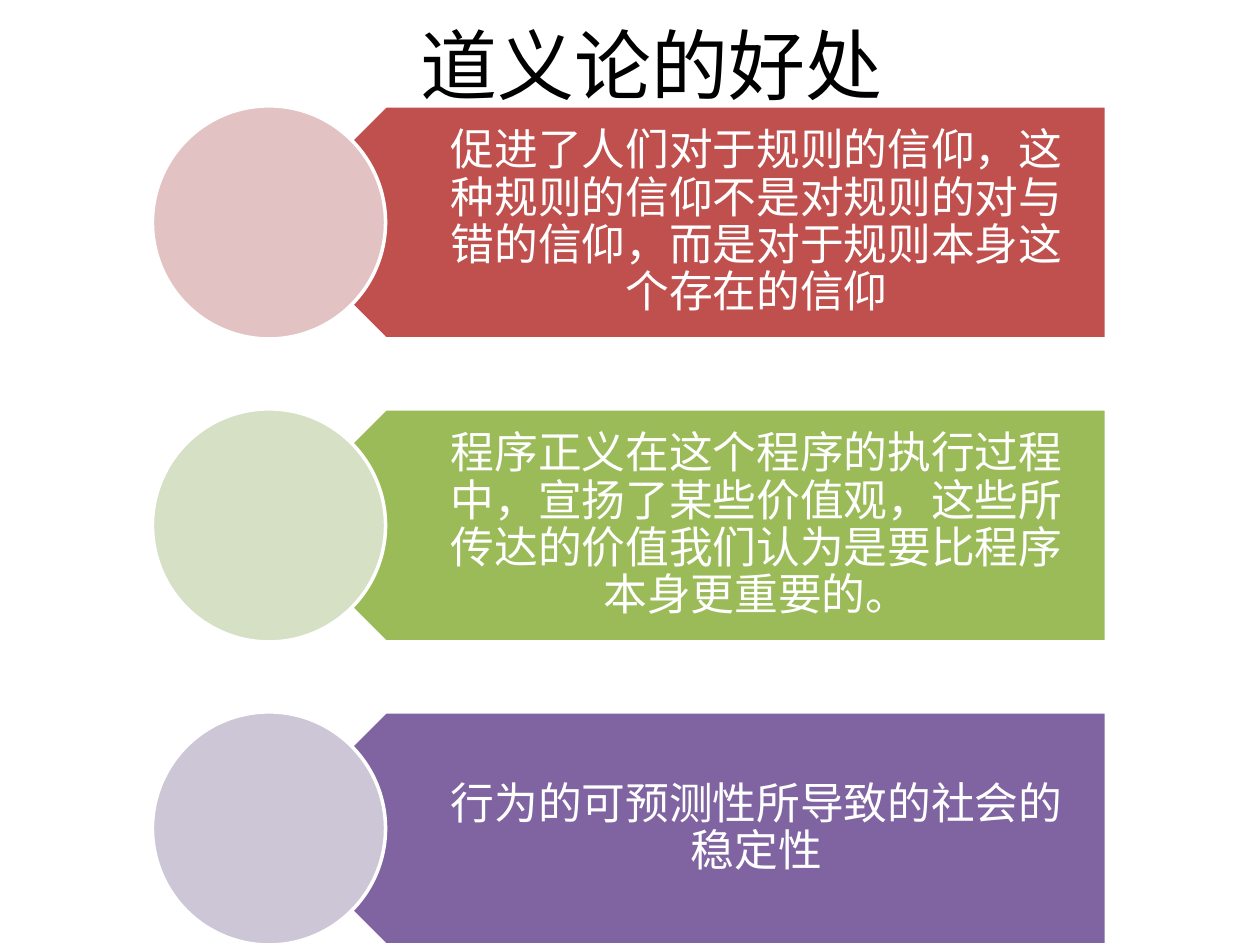
import pptx
import pptx.dml.color
import pptx.enum.shapes
import pptx.enum.text
import pptx.util
from pptx.util import Inches

SHAPES = pptx.enum.shapes.MSO_SHAPE
BENEFITS = [
    ("促进了人们对于规则的信仰，这种规则的信仰不是对规则的对与错的信仰，而是对于规则本身这个存在的信仰", "C0504D", "E2C2C2"),
    ("程序正义在这个程序的执行过程中，宣扬了某些价值观，这些所传达的价值我们认为是要比程序本身更重要的。", "9BBB59", "D5E0C4"),
    ("行为的可预测性所导致的社会的稳定性", "8064A2", "CDC6D7"),
]


def color(hex_string):
    """Turn a hex string into a colour."""
    return pptx.dml.color.RGBColor.from_string(hex_string)


def write_text(box, text, *, size, fill, spacing=1.0, margins=(0.1, 0.05, 0.1, 0.05)):
    """Write one centred paragraph into a box."""
    frame = box.text_frame
    frame.word_wrap = True
    frame.auto_size = pptx.enum.text.MSO_AUTO_SIZE.NONE
    frame.vertical_anchor = pptx.enum.text.MSO_ANCHOR.MIDDLE
    frame.margin_left, frame.margin_top, frame.margin_right, frame.margin_bottom = map(Inches, margins)
    para = frame.paragraphs[0]
    para.alignment = pptx.enum.text.PP_ALIGN.CENTER
    para.line_spacing = spacing
    span = para.add_run()
    span.text = text
    span.font.name = "Calibri"
    span.font.size = pptx.util.Pt(size)
    span.font.color.rgb = color(fill)


def add_outlined(page, kind, left, top, width, height, fill):
    """Add a filled shape with a white outline."""
    shape = page.shapes.add_shape(kind, left, top, width, height)
    shape.shadow.inherit = False
    shape.fill.solid()
    shape.fill.fore_color.rgb = color(fill)
    shape.line.color.rgb = color("FFFFFF")
    shape.line.width = pptx.util.Pt(2)
    return shape


def add_title(page, left, top, width, height):
    """Place the slide title."""
    title = page.shapes.title
    title.left, title.top, title.width, title.height = left, top, width, height
    write_text(title, "道义论的好处", size=44, fill="000000")


def add_benefit(page, left, top, width, height, text, dark, light):
    """Place a left-pointing banner, its text and its circle."""
    right = left + width
    tip = left + height // 2
    banner = add_outlined(page, SHAPES.PENTAGON, tip, top, right - tip, height, dark)
    banner.rotation = 180
    text_left = tip + height // 4
    box = page.shapes.add_textbox(text_left, top, right - text_left, height)
    write_text(box, text, size=25, fill="FFFFFF", spacing=0.9, margins=(0.82, 0.1, 0.19, 0.1))
    add_outlined(page, SHAPES.OVAL, left, top, height, height, light)


def main():
    """Build and save the slide."""
    deck = pptx.Presentation()
    deck.slide_width, deck.slide_height = Inches(10), Inches(7.5)
    page = deck.slides.add_slide(deck.slide_layouts.get_by_name("Title Only"))
    add_title(page, Inches(0.67), Inches(0), Inches(9), Inches(1.01))
    height = Inches(1.83)
    first_top = Inches(0.85)
    pitch = (deck.slide_height - height - first_top) // (len(BENEFITS) - 1)
    height = Inches(1.85)
    first_top = Inches(0.84)
    pitch = (deck.slide_height - height - first_top) // (len(BENEFITS) - 1)
    for index, (text, dark, light) in enumerate(BENEFITS):
        add_benefit(page, Inches(1.21), first_top + index * pitch, Inches(7.57), height, text, dark, light)
    deck.save("out.pptx")


if __name__ == "__main__":
    main()
